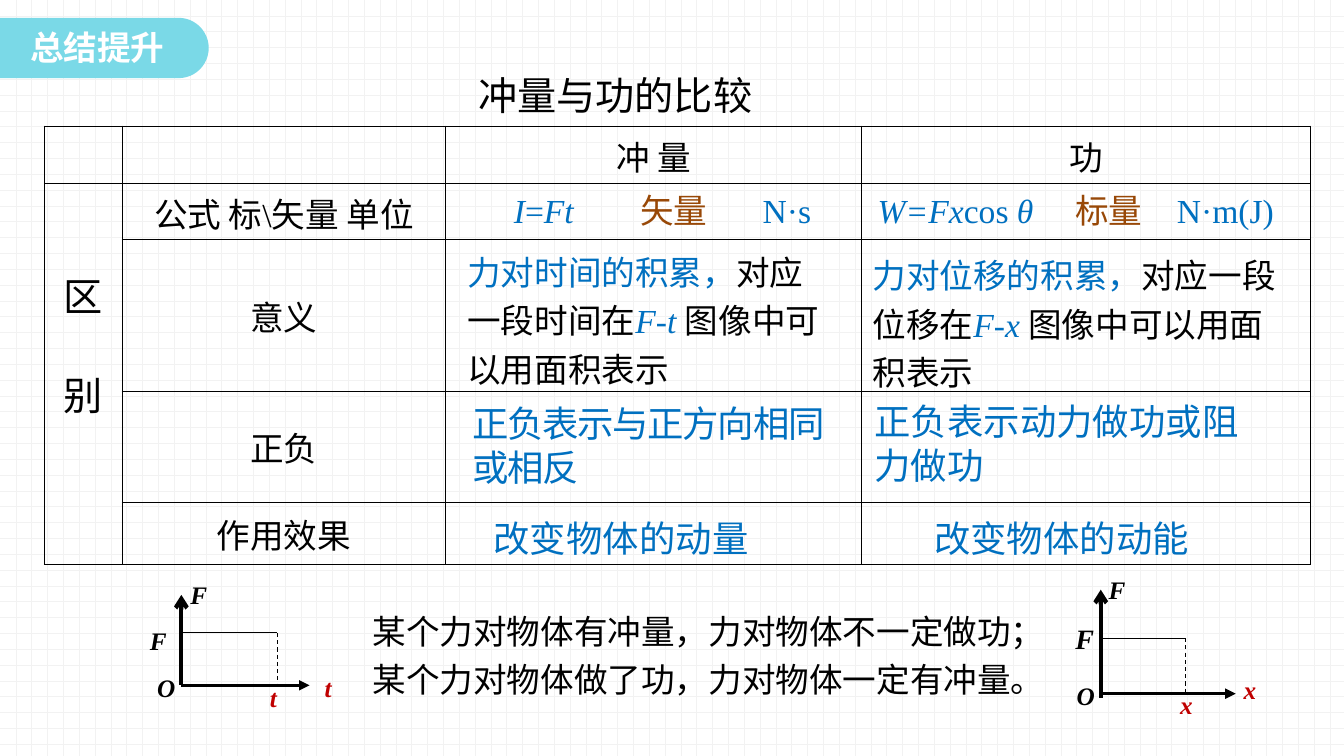
import dataclasses

import lxml.etree
import pptx
import pptx.dml.color
import pptx.enum.dml
import pptx.enum.shapes
import pptx.enum.text
import pptx.oxml.ns
import pptx.util

Cm = pptx.util.Cm
Pt = pptx.util.Pt
qn = pptx.oxml.ns.qn
Align = pptx.enum.text.PP_ALIGN
Anchor = pptx.enum.text.MSO_ANCHOR
Kind = pptx.enum.shapes.MSO_SHAPE


@dataclasses.dataclass(frozen=True)
class Theme:
    font: str = "Times New Roman"
    black: str = "000000"
    white: str = "FFFFFF"
    dots: str = "F2F2F2"
    badge: str = "7AD9E7"
    blue: str = "0070C0"
    brown: str = "984807"
    red: str = "C00000"
    head: int = 28
    note: int = 26
    body: int = 24
    tag: int = 20
    mark: int = 18


LOOK = Theme()


def rgb(code):
    return pptx.dml.color.RGBColor.from_string(code)


def write(frame, *lines, size=LOOK.body, tint=LOOK.black, bold=False,
          slant=False, align=None, pitch=None, gap=0, track=0):
    """Each line is a string or a list of (words, tint, slant)."""
    for at, line in enumerate(lines):
        para = frame.paragraphs[0] if at == 0 else frame.add_paragraph()
        para.alignment = align
        if pitch:
            para.line_spacing = pitch
        if at and gap:
            para.space_before = Pt(gap)
        parts = [(line, tint, slant)] if isinstance(line, str) else line
        for words, shade, tilt in parts:
            run = para.add_run()
            run.text = words
            font = run.font
            font.name, font.size = LOOK.font, Pt(size)
            font.bold, font.italic = bold, tilt
            font.color.rgb = rgb(shade)
            if track:
                run._r.get_or_add_rPr().set("spc", str(track * 100))


def add_text(shapes, box, *lines, wrap=True, grow=True, pad=True, **form):
    frame = shapes.add_textbox(*map(Cm, box)).text_frame
    frame.word_wrap = wrap
    if grow:
        frame.auto_size = pptx.enum.text.MSO_AUTO_SIZE.SHAPE_TO_FIT_TEXT
    if not pad:
        frame.margin_left = frame.margin_right = 0
        frame.margin_top = frame.margin_bottom = 0
    write(frame, *lines, **form)


def add_shape(shapes, kind, box):
    shape = shapes.add_shape(kind, *map(Cm, box))
    shape.shadow.inherit = False
    shape.line.fill.background()
    return shape


def add_line(shapes, start, end, width=0.75, tip=None, dash=False):
    line = shapes.add_connector(pptx.enum.shapes.MSO_CONNECTOR.STRAIGHT,
                                *map(Cm, start + end))
    line.line.width = Pt(width)
    line.line.color.rgb = rgb(LOOK.black)
    if dash:
        line.line.dash_style = pptx.enum.dml.MSO_LINE.DASH
    props = line._element.spPr
    if tip:
        lxml.etree.SubElement(props.find(qn("a:ln")), qn("a:tailEnd"), type=tip)
    lxml.etree.SubElement(props, qn("a:effectLst"))


def add_rule(cell):
    props = cell._tc.get_or_add_tcPr()
    for side in ("lnL", "lnR", "lnT", "lnB"):
        edge = lxml.etree.SubElement(props, qn("a:" + side), w=str(Pt(1)))
        fill = lxml.etree.SubElement(edge, qn("a:solidFill"))
        lxml.etree.SubElement(fill, qn("a:srgbClr"), val=LOOK.black)


def add_grid(shapes, left, top, cols, rows):
    grid = shapes.add_table(len(rows), len(cols), Cm(left), Cm(top),
                            Cm(sum(cols)), Cm(sum(rows))).table
    grid.first_row = grid.horz_banding = False
    for col, width in zip(grid.columns, cols):
        col.width = Cm(width)
    for row, height in zip(grid.rows, rows):
        row.height = Cm(height)
    for cell in grid.iter_cells():
        add_rule(cell)
        cell.fill.background()
    return grid


def add_graph(shapes, zero, foot, tip, peak, marks):
    """Axes from zero out to tip, with a force held steady up to peak."""
    group = shapes.add_group_shape().shapes
    (x, y), (right, top), (far, high) = zero, tip, peak
    add_line(group, (x, foot), (x, top), 3, "arrow")
    add_line(group, (x, y), (right, y), 2.5, "triangle")
    add_line(group, (x, high), (far, high))
    add_line(group, (far, high), (far, y), dash=True)
    for box, sign, form in marks:
        form = {"size": LOOK.mark, "bold": True, "slant": True} | form
        add_text(group, box, sign, **form)


def main():
    deck = pptx.Presentation()
    deck.slide_width, deck.slide_height = Cm(33.87), Cm(19.05)
    shapes = deck.slides.add_slide(deck.slide_layouts[6]).shapes

    # Dotted paper and badge
    paper = add_shape(shapes, Kind.RECTANGLE, (0, 0, 33.87, 19.05)).fill
    paper.patterned()
    paper.pattern = pptx.enum.dml.MSO_PATTERN.DOTTED_GRID
    paper.fore_color.rgb = rgb(LOOK.dots)
    paper.back_color.rgb = rgb(LOOK.white)
    badge = add_shape(shapes, Kind.ROUND_2_SAME_RECTANGLE,
                      (1.87, -1.42, 1.52, 5.26))
    badge.rotation = 90
    badge.adjustments[0], badge.adjustments[1] = 0.5, 0
    badge.fill.solid()
    badge.fill.fore_color.rgb = rgb(LOOK.badge)
    add_text(shapes, (0.51, 0.56, 3.94, 1.27), "总结提升", wrap=False,
             tint=LOOK.white, bold=True)

    # Table with its heads
    grid = add_grid(shapes, 1.12, 3.18, (1.96, 8.15, 10.49, 11.3),
                    (1.45, 1.4, 3.84, 2.79, 1.57))
    for col, head in ((2, "冲 量"), (3, "功")):
        write(grid.cell(0, col).text_frame, head, align=Align.CENTER)
    heads = ("公式 标\\矢量 单位", "意义", "正负", "作用效果")
    for row, head in enumerate(heads, 1):
        cell = grid.cell(row, 1)
        cell.vertical_anchor = Anchor.MIDDLE
        write(cell.text_frame, head, align=Align.CENTER)
    side = grid.cell(1, 0)
    side.merge(grid.cell(4, 0))
    side.margin_top = Cm(2.08)
    write(side.text_frame, "区", "别", size=LOOK.head, align=Align.CENTER, gap=30)
    add_text(shapes, (11.76, 1.07, 7.49, 1.83), "冲量与功的比较", wrap=False,
             size=LOOK.head, align=Align.CENTER, pitch=1.5)

    # Formula, kind and unit
    blue, black = LOOK.blue, LOOK.black
    push = [("I", blue, True), ("=", blue, False), ("Ft", blue, True)]
    work = [("W=Fx", blue, True), ("cos", blue, False), (" θ", blue, True)]
    for left, top, width, words, tint in (
            (12.7, 4.65, 2.59, push, blue),
            (15.88, 4.65, 2.36, "矢量", LOOK.brown),
            (18.97, 4.65, 2.29, "N·s", blue),
            (21.87, 4.67, 4.6, work, blue),
            (26.85, 4.67, 2.34, "标量", LOOK.brown),
            (29.41, 4.65, 3.15, "N·m(J)", blue)):
        add_text(shapes, (left, top, width, 1.27), words, tint=tint)

    # Meaning
    for box, name, sign in (((11.53, 6.02, 9.5, 3.96), "时间", "t"),
                            ((21.74, 6.1, 11.05, 3.96), "位移", "x")):
        add_text(shapes, box, [
            (f"力对{name}的积累，", blue, False),
            (f"对应一段{name}在", black, False),
            ("F", blue, True), ("-", blue, False), (sign + " ", blue, True),
            ("图像中可以用面积表示", black, False)], pitch=1.2)

    # Sign and effect
    for box, words, track in (
            ((11.66, 9.98, 9.73, 2.49), "正负表示与正方向相同或相反", -1),
            ((21.79, 9.93, 9.98, 2.49), "正负表示动力做功或阻力做功", 0),
            ((12.19, 12.88, 7.59, 1.37), "改变物体的动量", 0),
            ((23.29, 12.88, 7.77, 1.37), "改变物体的动能", 0)):
        add_text(shapes, box, words, size=LOOK.note, tint=blue, track=track)

    # Closing words
    add_text(shapes, (9.14, 15.06, 17.22, 2.62),
             "某个力对物体有冲量，力对物体不一定做功；",
             "某个力对物体做了功，力对物体一定有冲量。", pitch=1.2)

    # Graphs of force
    tight = {"grow": False, "pad": False, "align": Align.JUSTIFY}
    red = {"tint": LOOK.red}
    loose = red | {"wrap": False}
    add_graph(shapes, (4.57, 17.27), 17.25, (7.8, 14.99), (6.99, 15.95), (
        ((4.8, 14.6, 1.22, 0.66), "F", tight),
        ((8.18, 16.94, 1.19, 0.66), "t", tight | red),
        ((3.96, 16.94, 1.22, 0.66), "O", tight),
        ((3.78, 15.77, 0.81, 0.51), "F", tight),
        ((6.55, 17.07, 0.69, 1.02), "t", loose)))
    add_graph(shapes, (27.74, 17.48), 17.58, (31.14, 14.86), (29.87, 16.08), (
        ((31.09, 16.87, 0.84, 1.02), "x", loose),
        ((27.94, 14.48, 1.3, 0.79), "F", tight),
        ((27.13, 17.15, 1.3, 0.79), "O", tight),
        ((27.1, 15.67, 1.3, 0.79), "F", tight | {"size": LOOK.tag}),
        ((29.49, 17.25, 0.74, 1.02), "x", red)))

    deck.save("out.pptx")


if __name__ == "__main__":
    main()
